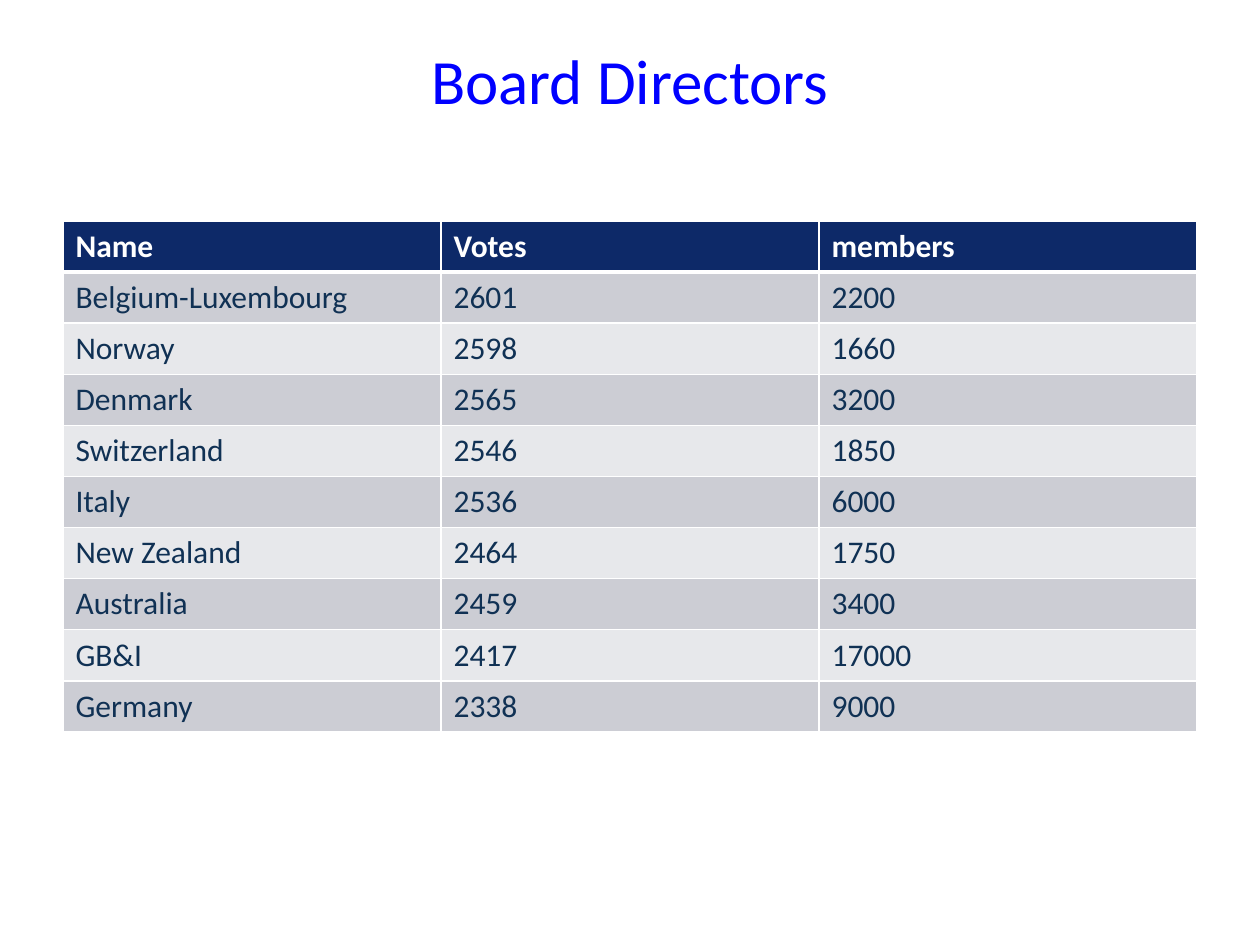
import pptx
import pptx.dml.color
import pptx.enum.text
import pptx.oxml
import pptx.oxml.ns
import pptx.util

PX = 914400 / 126
FONT = "Calibri"
COLORS = {
    "title": "0000FF",
    "head": "0D2968",
    "odd": "CCCDD4",
    "even": "E7E8EB",
    "text": "103154",
    "white": "FFFFFF",
}
ROWS = [
    ("Name", "Votes", "members"),
    ("Belgium-Luxembourg", "2601", "2200"),
    ("Norway", "2598", "1660"),
    ("Denmark", "2565", "3200"),
    ("Switzerland", "2546", "1850"),
    ("Italy", "2536", "6000"),
    ("New Zealand", "2464", "1750"),
    ("Australia", "2459", "3400"),
    ("GB&I", "2417", "17000"),
    ("Germany", "2338", "9000"),
]


def emu(px):
    return pptx.util.Emu(round(px * PX))


def color(name):
    return pptx.dml.color.RGBColor.from_string(COLORS[name])


def style(para, size, tint, bold=False):
    font = para.font
    font.name = FONT
    font.size = pptx.util.Pt(size)
    font.bold = bold
    font.color.rgb = color(tint)


def edge(cell, side, width):
    """Draw a white border, width in points, on side L, R, T or B."""
    line = pptx.oxml.parse_xml(
        f'<a:ln{side} {pptx.oxml.ns.nsdecls("a")} w="{pptx.util.Pt(width)}">'
        f'<a:solidFill><a:srgbClr val="{COLORS["white"]}"/></a:solidFill>'
        f'</a:ln{side}>'
    )
    cell._tc.get_or_add_tcPr().append(line)


def add_title(slide, text, left, top, width, height):
    title = slide.shapes.title
    title.left, title.top = emu(left), emu(top)
    title.width, title.height = emu(width), emu(height)
    frame = title.text_frame
    frame.text = text
    frame.vertical_anchor = pptx.enum.text.MSO_ANCHOR.MIDDLE
    para = frame.paragraphs[0]
    para.alignment = pptx.enum.text.PP_ALIGN.CENTER
    style(para, 36, "title")


def fill_cell(cell, text, row):
    head = row == 0
    cell.text = text
    style(cell.text_frame.paragraphs[0], 18, "white" if head else "text", head)
    widths = {"L": 1, "R": 1, "T": 3 if row == 1 else 1, "B": 3 if head else 1}
    for side, width in widths.items():
        edge(cell, side, width)
    cell.fill.solid()
    band = "odd" if row % 2 else "even"
    cell.fill.fore_color.rgb = color("head" if head else band)


def add_votes(slide, rows, left, top, width, height):
    box = [emu(n) for n in (left, top, width, height)]
    table = slide.shapes.add_table(len(rows), len(rows[0]), *box).table
    for r, row in enumerate(rows):
        for c, text in enumerate(row):
            fill_cell(table.cell(r, c), text, r)


def main():
    deck = pptx.Presentation()
    deck.slide_width, deck.slide_height = emu(1260), emu(945)
    slide = deck.slides.add_slide(deck.slide_layouts[5])
    add_title(slide, "Board Directors", 63, 38, 1134, 83)
    add_votes(slide, ROWS, 63, 221, 1134, 511)
    deck.save("out.pptx")


if __name__ == "__main__":
    main()
